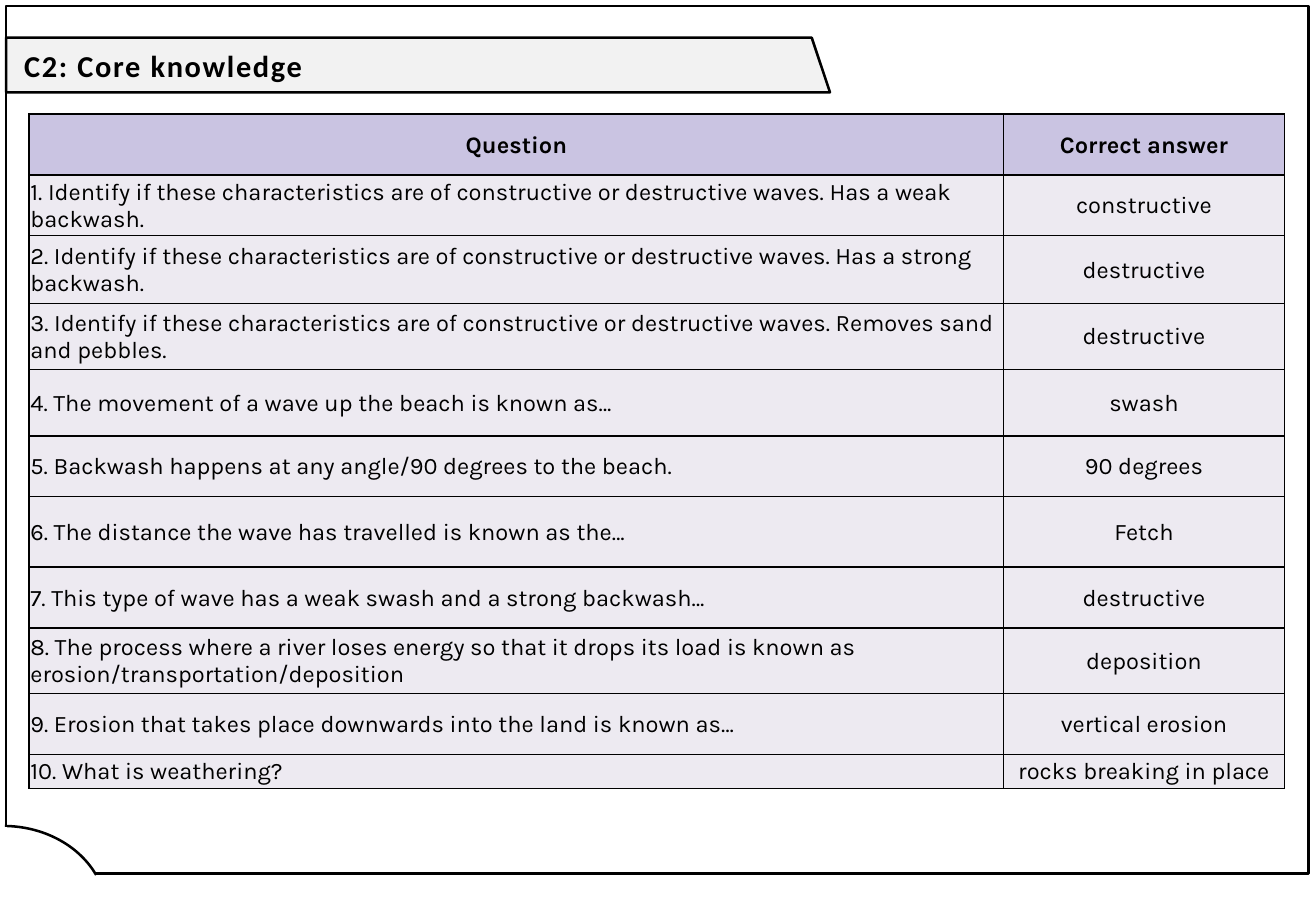
from lxml import etree
from pptx import Presentation
from pptx import util as u
from pptx.dml.color import RGBColor
from pptx.enum import shapes, text
from pptx.oxml import ns

BLACK = RGBColor(0x00, 0x00, 0x00)
WHITE = RGBColor(0xFF, 0xFF, 0xFF)
BANNER_GREY = RGBColor(0xF2, 0xF2, 0xF2)
HEADER_LILAC = RGBColor(0xCA, 0xC4, 0xE2)
ROW_LILAC = RGBColor(0xED, 0xEA, 0xF1)

HEADINGS = ("Question", "Correct answer")
WAVES = "Identify if these characteristics are of constructive or destructive waves."
QUESTIONS = [
    (f"{WAVES} Has a weak backwash.", "constructive"),
    (f"{WAVES} Has a strong backwash.", "destructive"),
    (f"{WAVES} Removes sand and pebbles.", "destructive"),
    ("The movement of a wave up the beach is known as…", "swash"),
    ("Backwash happens at any angle/90 degrees to the beach.", "90 degrees"),
    ("The distance the wave has travelled is known as the…", "Fetch"),
    ("This type of wave has a weak swash and a strong backwash…", "destructive"),
    ("The process where a river loses energy so that it drops its load is known as "
     "erosion/transportation/deposition", "deposition"),
    ("Erosion that takes place downwards into the land is known as…", "vertical erosion"),
    ("What is weathering?", "rocks breaking in place"),
]
COLUMN_WIDTHS = (8.02, 2.31)
ROW_HEIGHTS = (0.5, 0.5, 0.56, 0.54, 0.55, 0.5, 0.58, 0.5, 0.54, 0.5, 0.28)


def style_shape(shape, fill=None, outlined=True):
    shape.shadow.inherit = False
    if fill is None:
        shape.fill.background()
    else:
        shape.fill.solid()
        shape.fill.fore_color.rgb = fill
    if outlined:
        shape.line.color.rgb = BLACK
        shape.line.width = u.Pt(1.5)
    else:
        shape.line.fill.background()


def format_run(run, font_name, size, bold):
    run.font.name = font_name
    run.font.size = u.Pt(size)
    run.font.bold = bold
    run.font.color.rgb = BLACK


def add_banner(slide, left, top, width, height):
    slant = 0.15
    builder = slide.shapes.build_freeform(u.Inches(left), u.Inches(top))
    corners = [(width - slant, 0), (width, height), (0, height)]
    builder.add_line_segments(
        [(u.Inches(left + x), u.Inches(top + y)) for x, y in corners], close=True)
    style_shape(builder.convert_to_shape(), BANNER_GREY)


def add_frame(slide, left, top, width, height):
    frame = slide.shapes.add_shape(
        shapes.MSO_SHAPE.RECTANGLE, *map(u.Inches, (left, top, width, height)))
    style_shape(frame)


def add_corner(slide, left, top, width, height):
    arc = slide.shapes.add_shape(
        shapes.MSO_SHAPE.ARC, *map(u.Inches, (left, top, width, height)))
    arc.adjustments[0] = 162.525
    arc.adjustments[1] = 202.265
    style_shape(arc, WHITE)
    edge_cover = slide.shapes.add_shape(
        shapes.MSO_SHAPE.RECTANGLE,
        *map(u.Inches, (left + 0.83, top + 0.01, 0.05, 0.1)))
    style_shape(edge_cover, WHITE, outlined=False)


def add_title(slide, left, top, width, height):
    title = slide.shapes.add_textbox(*map(u.Inches, (left, top, width, height)))
    frame = title.text_frame
    frame.word_wrap = True
    frame.vertical_anchor = text.MSO_ANCHOR.MIDDLE
    frame.text = "C2: Core knowledge"
    paragraph = frame.paragraphs[0]
    paragraph.line_spacing = 1.07
    paragraph.space_after = u.Pt(8)
    run = paragraph.runs[0]
    format_run(run, "Calibri", 18, True)
    run._r.get_or_add_rPr().set("spc", "100")


def add_borders(cell):
    properties = cell._tc.get_or_add_tcPr()
    for side in ("lnL", "lnR", "lnT", "lnB"):
        line = etree.SubElement(properties, ns.qn(f"a:{side}"), w=str(u.Pt(1)))
        fill = etree.SubElement(line, ns.qn("a:solidFill"))
        etree.SubElement(fill, ns.qn("a:srgbClr"), val=str(BLACK))


def fill_cell(cell, wording, is_header, centred):
    add_borders(cell)
    cell.fill.solid()
    cell.fill.fore_color.rgb = HEADER_LILAC if is_header else ROW_LILAC
    cell.margin_left = cell.margin_right = cell.margin_top = u.Inches(0.01)
    cell.margin_bottom = 0
    cell.vertical_anchor = text.MSO_ANCHOR.MIDDLE
    cell.text_frame.text = wording
    paragraph = cell.text_frame.paragraphs[0]
    paragraph.alignment = text.PP_ALIGN.CENTER if centred else text.PP_ALIGN.LEFT
    format_run(paragraph.runs[0], "Karla", 14, is_header)


def add_question_table(slide, left, top):
    rows = [HEADINGS] + [
        (f"{number}. {question}", answer)
        for number, (question, answer) in enumerate(QUESTIONS, 1)]
    table = slide.shapes.add_table(
        len(rows), len(COLUMN_WIDTHS), u.Inches(left), u.Inches(top),
        u.Inches(sum(COLUMN_WIDTHS)), u.Inches(sum(ROW_HEIGHTS))).table
    table.horz_banding = False
    for column, width in zip(table.columns, COLUMN_WIDTHS):
        column.width = u.Inches(width)
    for row_index, (wordings, height) in enumerate(zip(rows, ROW_HEIGHTS)):
        table.rows[row_index].height = u.Inches(height)
        is_header = row_index == 0
        for column_index, wording in enumerate(wordings):
            fill_cell(table.cell(row_index, column_index), wording,
                      is_header, is_header or column_index == 1)


def main():
    presentation = Presentation()
    presentation.slide_width = u.Inches(10.83)
    presentation.slide_height = u.Inches(7.5)
    slide = presentation.slides.add_slide(presentation.slide_layouts[6])
    add_banner(slide, 0.05, 0.31, 6.78, 0.45)
    add_frame(slide, 0.05, 0.05, 10.72, 7.14)
    add_corner(slide, -0.82, 6.8, 1.7, 1.45)
    add_title(slide, 0.1, 0.21, 6.43, 0.63)
    add_question_table(slide, 0.24, 0.94)
    presentation.save("out.pptx")


if __name__ == "__main__":
    main()
